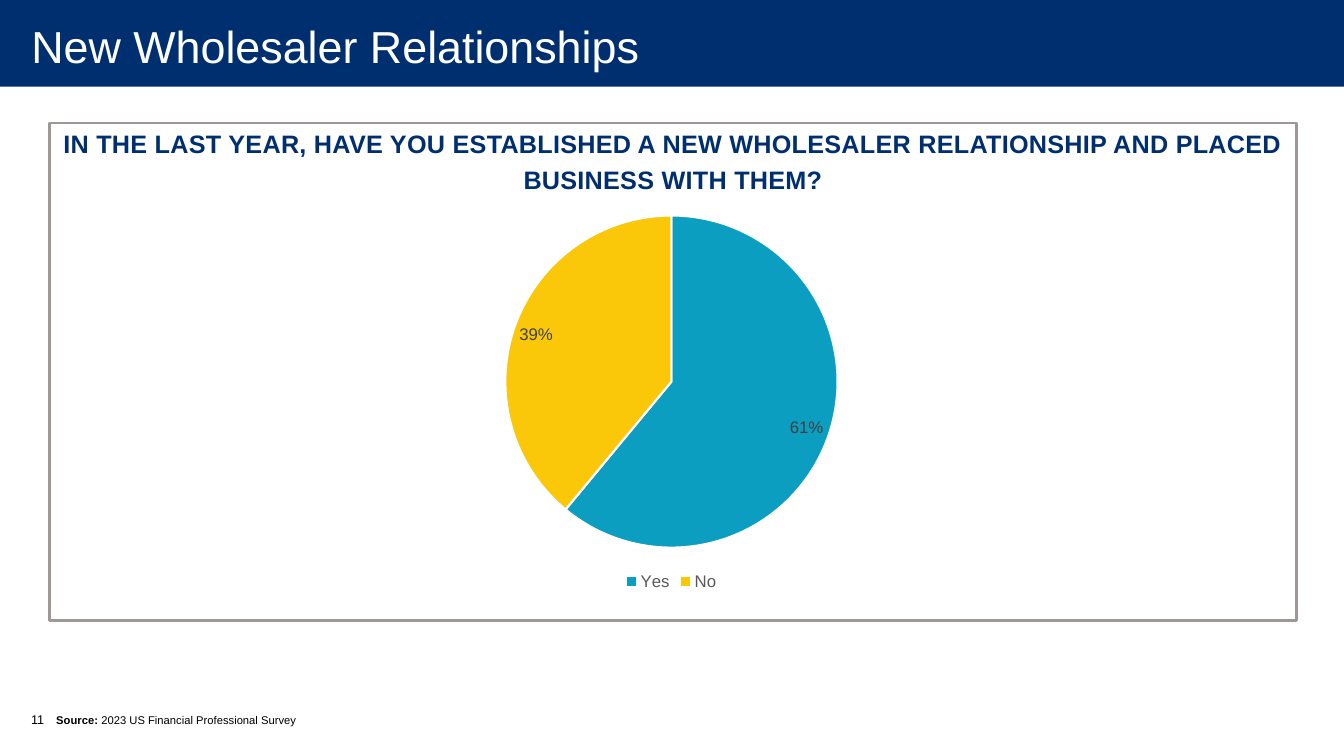
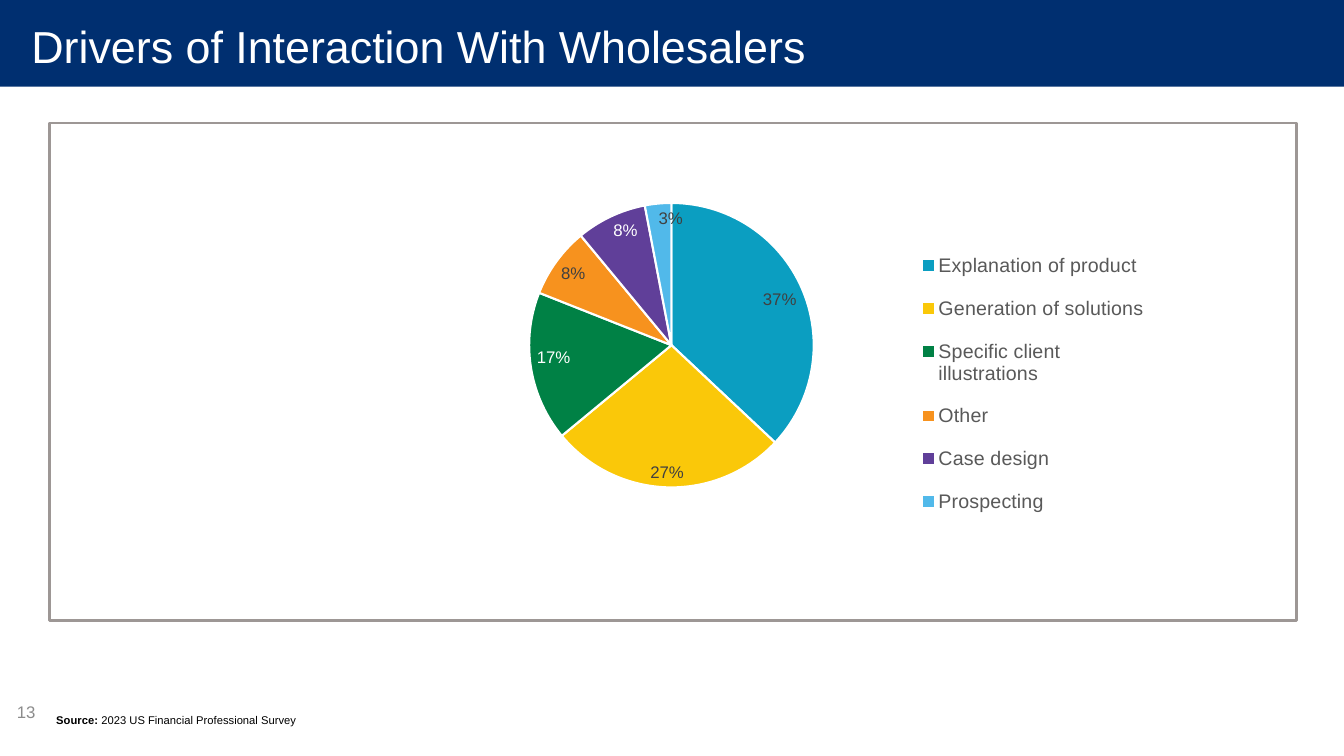
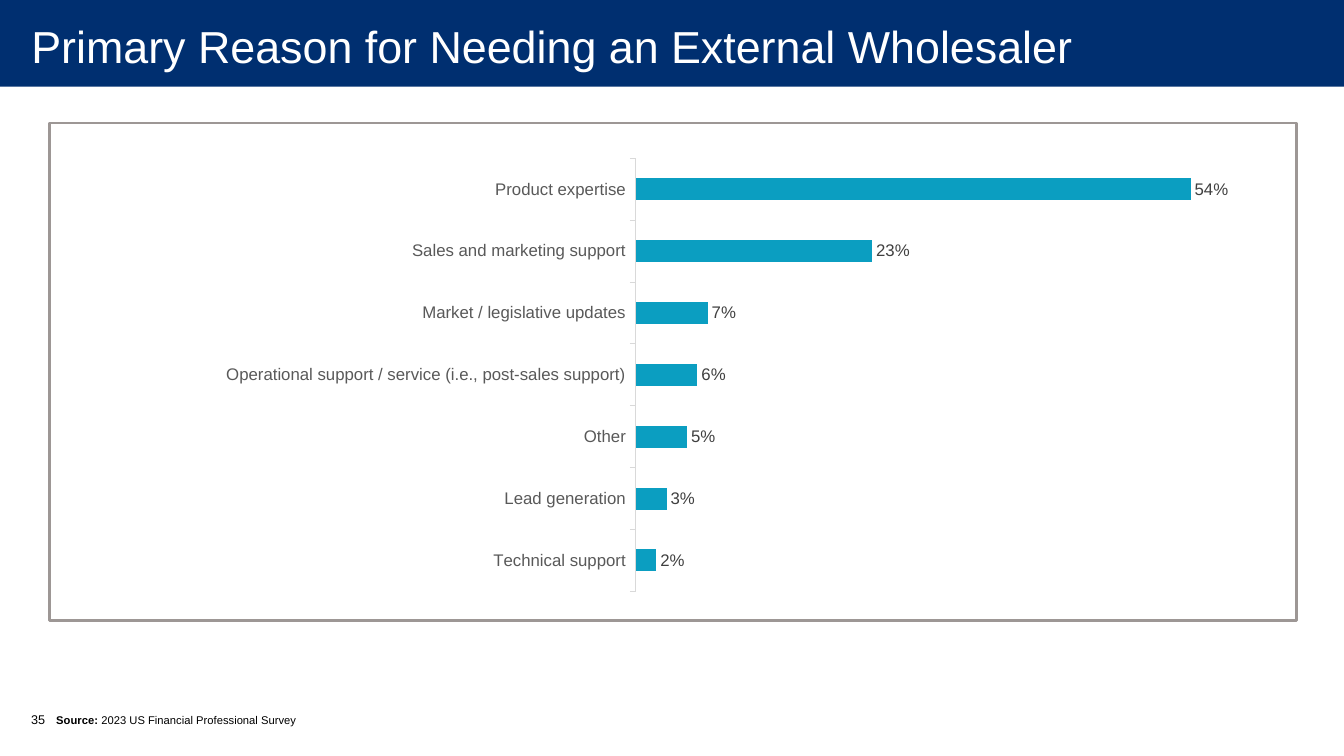
from dataclasses import dataclass

from lxml import etree
from pptx import Presentation
from pptx.chart.data import CategoryChartData
from pptx.dml.color import RGBColor
from pptx.enum.chart import (XL_CHART_TYPE as Kind, XL_LABEL_POSITION as LabelPos,
                             XL_LEGEND_POSITION as LegendPos, XL_TICK_MARK as Tick)
from pptx.enum.shapes import MSO_SHAPE as Preset
from pptx.enum.text import MSO_ANCHOR as Anchor, PP_ALIGN as Align
from pptx.oxml.ns import qn
from pptx.util import Inches, Pt


@dataclass(frozen=True)
class Theme:
    font: str = "Arial"
    navy: str = "002F70"
    white: str = "FFFFFF"
    black: str = "000000"
    frame: str = "9D9795"
    axis: str = "D9D9D9"
    label: str = "404040"
    caption: str = "595959"
    muted: str = "8C8C8C"
    accents: tuple = ("0B9EC1", "FAC809", "008145", "F7921E", "603F99", "51B9EA")
    title_size: int = 32
    heading_size: int = 18
    legend_size: int = 14
    body_size: int = 12
    chart_size: int = 10
    number_size: int = 9
    source_size: int = 8


THEME = Theme()
TITLE_ONLY = 5
CHART_X, CHART_W = 5.85, 88.22


def rgb(value):
    return RGBColor.from_string(value)


def set_font(font, size, color, bold=False):
    font.name, font.size, font.bold = THEME.font, Pt(size), bold
    font.color.rgb = rgb(color)


def write(tf, *parts, size, color=THEME.black, align=Align.LEFT, anchor=Anchor.TOP,
          wrap=True, line=None, after=None, spacing=None):
    """Fill one paragraph; each part is a (text, bold) pair."""
    tf.word_wrap, tf.vertical_anchor = wrap, anchor
    p = tf.paragraphs[0]
    p.alignment, p.line_spacing = align, line
    if after is not None:
        p.space_after = Pt(after)
    for text, bold in parts:
        r = p.add_run()
        r.text = text
        set_font(r.font, size, color, bold)
        if spacing:
            r.font._element.set("spc", str(int(spacing * 100)))


def place_inside(parent, x, y, w, h, inner=False):
    """Set a manual chart layout, in shares of the chart."""
    old = parent.find(qn("c:layout"))
    layout = etree.Element(qn("c:layout")) if old is None else old
    if old is None:
        after_entry = parent.find(qn("c:legendPos"))
        if after_entry is None:
            parent.insert(0, layout)
        else:
            after_entry.addnext(layout)
    manual = etree.SubElement(layout, qn("c:manualLayout"))
    entries = [("layoutTarget", "inner")] if inner else []
    entries += [("xMode", "edge"), ("yMode", "edge"),
                ("x", x), ("y", y), ("w", w), ("h", h)]
    for tag, value in entries:
        etree.SubElement(manual, qn("c:" + tag)).set("val", str(value))


class Deck:
    """Holds the presentation and its current slide; lengths are percent of the slide."""

    def __init__(self):
        self.prs = Presentation()
        self.prs.slide_width, self.prs.slide_height = Inches(13.33), Inches(7.5)
        self.layout = self.prs.slide_layouts[TITLE_ONLY]
        self.slide = None

    def box(self, x, y, w, h):
        width, height = self.prs.slide_width, self.prs.slide_height
        return [int(share * side / 100)
                for share, side in zip((x, y, w, h), (width, height) * 2)]

    def rect(self, *at, fill, line=None):
        sp = self.slide.shapes.add_shape(Preset.RECTANGLE, *self.box(*at))
        sp.shadow.inherit = False
        sp.fill.solid()
        sp.fill.fore_color.rgb = rgb(fill)
        if line:
            sp.line.color.rgb, sp.line.width = rgb(line), Pt(2)
        else:
            sp.line.fill.background()
        return sp

    def add_backdrop(self):
        """Draw the band and frame, then hand them to the shared layout."""
        band = self.rect(0, 0, 100, 11.47, fill=THEME.navy)
        frame = self.rect(3.68, 16.27, 92.8, 65.87, fill=THEME.white, line=THEME.frame)
        for sp in (frame, band):
            self.layout.shapes._spTree.insert(2, sp._element)

    def new_slide(self, title):
        first = self.slide is None
        self.slide = self.prs.slides.add_slide(self.layout)
        if first:
            self.add_backdrop()
        sp = self.slide.shapes.title
        sp.left, sp.top, sp.width, sp.height = self.box(0.08, -0.4, 100, 12.93)
        tf = sp.text_frame
        tf.margin_left, tf.margin_right = Inches(0.3), Inches(0.2)
        tf.margin_top = tf.margin_bottom = 0
        write(tf, (title, False), size=THEME.title_size, color=THEME.white,
              anchor=Anchor.MIDDLE, wrap=False)

    def text(self, at, *parts, **style):
        sp = self.slide.shapes.add_textbox(*self.box(*at))
        write(sp.text_frame, *parts, **style)

    def heading(self, text):
        self.text((3.68, 18, 92.8, 5.87), (text, True), size=THEME.heading_size,
                  color=THEME.navy, align=Align.CENTER, anchor=Anchor.MIDDLE,
                  line=1.2, after=12.6, spacing=0.2)

    def source(self):
        self.text((3.45, 87.2, 43.89, 9.6), ("Source: ", True),
                  ("2023 US Financial Professional Survey", False),
                  size=THEME.source_size, anchor=Anchor.BOTTOM)

    def number(self, value):
        self.text((1.58, 93.47, 3.68, 5.33), (value, False), size=THEME.number_size)

    def muted_number(self, value):
        self.text((0.08, 92, 3.3, 4.27), (value, False), size=THEME.body_size,
                  color=THEME.muted, align=Align.RIGHT, anchor=Anchor.MIDDLE)

    def chart(self, kind, top, height, values, label_pos, plot_at=None):
        data = CategoryChartData(number_format="0%")
        data.categories = list(values)
        data.add_series("Series 1", values.values())
        at = self.box(CHART_X, top, CHART_W, height)
        chart = self.slide.shapes.add_chart(kind, *at, data).chart
        set_font(chart.font, THEME.chart_size, THEME.black)
        chart.has_title = chart.has_legend = False
        chart.plots[0].vary_by_categories = kind == Kind.PIE
        labels = chart.plots[0].series[0].data_labels
        labels.show_value, labels.position = True, label_pos
        labels.number_format, labels.number_format_is_linked = "0%", False
        set_font(labels.font, THEME.body_size, THEME.label)
        if plot_at:
            place_inside(chart._chartSpace.chart.plotArea, *plot_at, inner=True)
        return chart

    def pie(self, top, height, values, label_pos, legend_pos, legend_size,
            plot_at=None, legend_at=None, light_labels=()):
        chart = self.chart(Kind.PIE, top, height, values, label_pos, plot_at)
        points = chart.plots[0].series[0].points
        for i, color in enumerate(THEME.accents[:len(values)]):
            fmt = points[i].format
            fmt.fill.solid()
            fmt.fill.fore_color.rgb = rgb(color)
            fmt.line.color.rgb, fmt.line.width = rgb(THEME.white), Pt(1.5)
        for i in light_labels:
            label = points[i].data_label
            set_font(label.font, THEME.body_size, THEME.white)
            label.position = label_pos
        chart.has_legend = True
        legend = chart.legend
        legend.position, legend.include_in_layout = legend_pos, False
        set_font(legend.font, legend_size, THEME.caption)
        if legend_at:
            place_inside(legend._element, *legend_at)

    def bars(self, top, height, values, plot_at):
        chart = self.chart(Kind.BAR_CLUSTERED, top, height, values,
                           LabelPos.OUTSIDE_END, plot_at)
        plot = chart.plots[0]
        plot.gap_width = 182
        fill = plot.series[0].format.fill
        fill.solid()
        fill.fore_color.rgb = rgb(THEME.accents[0])
        values_axis, names_axis = chart.value_axis, chart.category_axis
        values_axis.minimum_scale, values_axis.maximum_scale = 0, 0.6
        values_axis.has_major_gridlines = values_axis.visible = False
        names_axis.major_tick_mark = Tick.OUTSIDE
        set_font(names_axis.tick_labels.font, THEME.body_size, THEME.caption)
        line = names_axis.format.line
        line.color.rgb, line.width = rgb(THEME.axis), Pt(0.75)


def main():
    deck = Deck()

    deck.new_slide("New Wholesaler Relationships")
    deck.heading("IN THE LAST YEAR, HAVE YOU ESTABLISHED A NEW WHOLESALER "
                 "RELATIONSHIP AND PLACED BUSINESS WITH THEM?")
    deck.pie(26.67, 52, {"Yes": 0.61, "No": 0.39}, LabelPos.BEST_FIT,
             LegendPos.BOTTOM, THEME.body_size)
    deck.source()
    deck.number("11")

    deck.new_slide("Drivers of Interaction With Wholesalers")
    drivers = {"Explanation of product": 0.37, "Generation of solutions": 0.27,
               "Specific client illustrations": 0.17, "Other": 0.08,
               "Case design": 0.08, "Prospecting": 0.03}
    deck.pie(16.93, 63.87, drivers, LabelPos.INSIDE_END, LegendPos.RIGHT,
             THEME.legend_size, plot_at=(0.38, 0.09, 0.24, 0.72),
             legend_at=(0.71, 0.22, 0.19, 0.62), light_labels=(2, 4))
    deck.muted_number("13")
    deck.source()

    deck.new_slide("Primary Reason for Needing an External Wholesaler")
    reasons = {"Technical support": 0.02, "Lead generation": 0.03, "Other": 0.05,
               "Operational support / service (i.e., post-sales support)": 0.06,
               "Market / legislative updates": 0.07,
               "Sales and marketing support": 0.23, "Product expertise": 0.54}
    deck.bars(17.87, 61.6, reasons, plot_at=(0.47, 0.05, 0.52, 0.93))
    deck.source()
    deck.number("35")

    deck.prs.save("out.pptx")


if __name__ == "__main__":
    main()
